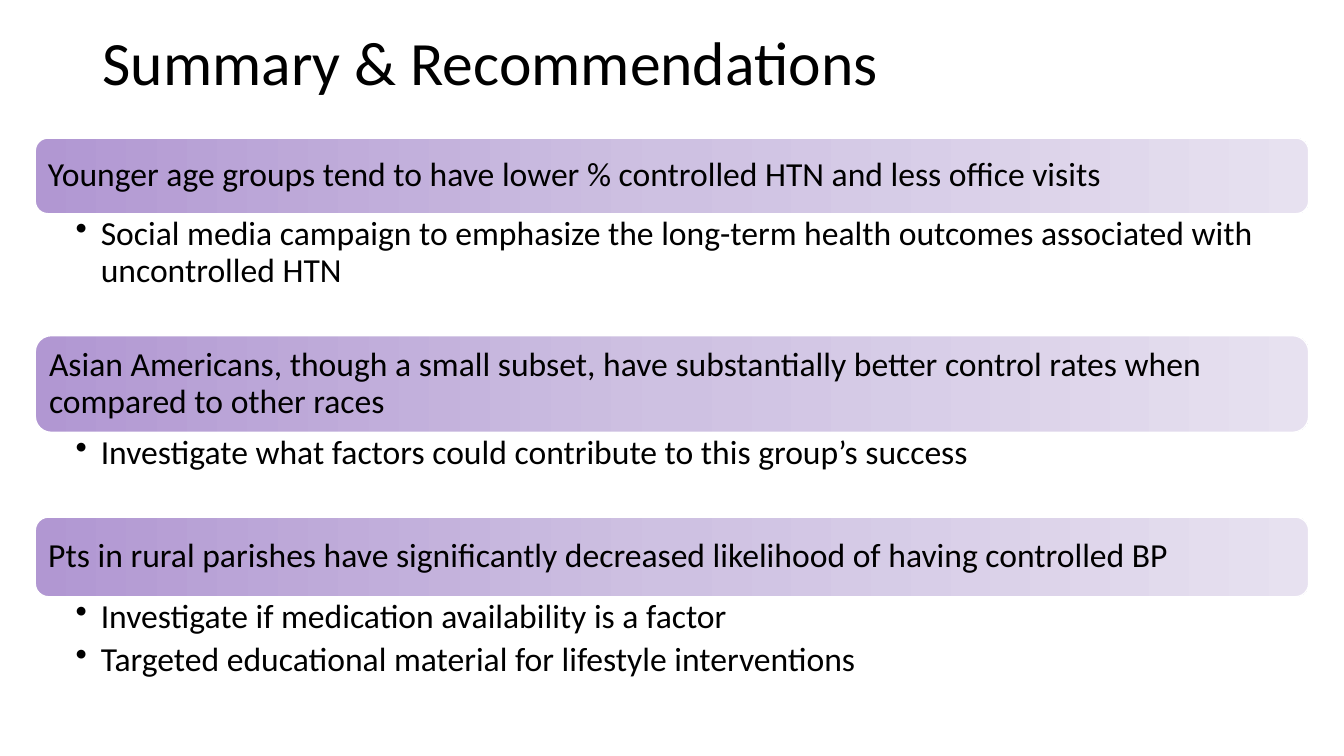
import copy
import pptx
import pptx.util
import pptx.dml.color
import pptx.enum.shapes
import pptx.enum.text
import pptx.oxml.ns
from lxml import etree

PX = 9144  # 100 px to the inch
FONT = "Calibri"
COLORS = {"text": "000000", "edge": "FFFFFF",
          "dark": "B197D2", "mid": "CEC1E2", "light": "E7E1F0"}
FADE = [(0, "dark"), (0.5, "mid"), (1, "light")]
LEFT, WIDTH, TOP = 35, 1263, 137

# Finding, bar height, actions, height of their box
TOPICS = [
    ("Younger age groups tend to have lower % controlled HTN and less office visits", 75,
     ["Social media campaign to emphasize the long-term health outcomes "
      "associated with uncontrolled HTN"], 121),
    ("Asian Americans, though a small subset, have substantially better control rates "
     "when compared to other races", 96,
     ["Investigate what factors could contribute to this group’s success"], 84),
    ("Pts in rural parishes have significantly decreased likelihood of having controlled BP", 79,
     ["Investigate if medication availability is a factor",
      "Targeted educational material for lifestyle interventions"], 84),
]


def color(name):
    return pptx.dml.color.RGBColor.from_string(COLORS[name])


def write(shape, lines, size, pads, middle=True, after=0):
    """Fill a shape with left-aligned paragraphs and return its text frame."""
    frame = shape.text_frame
    frame.word_wrap = True
    anchor = pptx.enum.text.MSO_ANCHOR
    frame.vertical_anchor = anchor.MIDDLE if middle else anchor.TOP
    (frame.margin_left, frame.margin_top,
     frame.margin_right, frame.margin_bottom) = [pad * PX for pad in pads]
    frame.text = "\n".join(lines)
    for para in frame.paragraphs:
        para.alignment = pptx.enum.text.PP_ALIGN.LEFT
        para.line_spacing = 0.9
        para.space_after = pptx.util.Pt(after)
        para.font.name = FONT
        para.font.size = pptx.util.Pt(size)
        para.font.color.rgb = color("text")
    return frame


def add_title(slide, x, y, w, h):
    box = slide.shapes.add_textbox(x * PX, y * PX, w * PX, h * PX)
    write(box, ["Summary & Recommendations"], 44, (10, 5, 10, 5))


def add_bar(slide, text, x, y, w, h):
    kind = pptx.enum.shapes.MSO_SHAPE.ROUNDED_RECTANGLE
    bar = slide.shapes.add_shape(kind, x * PX, y * PX, w * PX, h * PX)
    bar.shadow.inherit = False
    bar.line.color.rgb = color("edge")
    bar.line.width = pptx.util.Pt(1)
    # Three-stop fade from left to right
    bar.fill.gradient()
    bar.fill.gradient_angle = 0
    first = next(bar._element.spPr.iter(pptx.oxml.ns.qn("a:gs")))
    first.addnext(copy.deepcopy(first))
    for stop, (place, name) in zip(bar.fill.gradient_stops, FADE):
        stop.position = place
        stop.color.rgb = color(name)
    write(bar, [text], 24, (9, 10, 9, 10))


def add_list(slide, lines, x, y, w, h):
    box = slide.shapes.add_textbox(x * PX, y * PX, w * PX, h * PX)
    frame = write(box, lines, 24, (40, 3, 19, 3), middle=False, after=4.8)
    for para in frame.paragraphs:
        props = para._p.get_or_add_pPr()
        props.set("marL", str(25 * PX))
        props.set("indent", str(-25 * PX))
        mark = etree.SubElement(props, pptx.oxml.ns.qn("a:buChar"))
        mark.set("char", "•")
        # The bullet must come before the default run properties
        props.find(pptx.oxml.ns.qn("a:defRPr")).addprevious(mark)


def add_topics(slide, x, y, w):
    for text, bar, lines, body in TOPICS:
        add_bar(slide, text, x, y, w, bar)
        add_list(slide, lines, x, y + bar, w, body)
        y += bar + body


def main():
    deck = pptx.Presentation()
    deck.slide_width, deck.slide_height = 1333 * PX, 750 * PX
    slide = deck.slides.add_slide(deck.slide_layouts[6])
    add_title(slide, 92, 13, 1150, 104)
    add_topics(slide, LEFT, TOP, WIDTH)
    deck.save("out.pptx")


if __name__ == "__main__":
    main()
